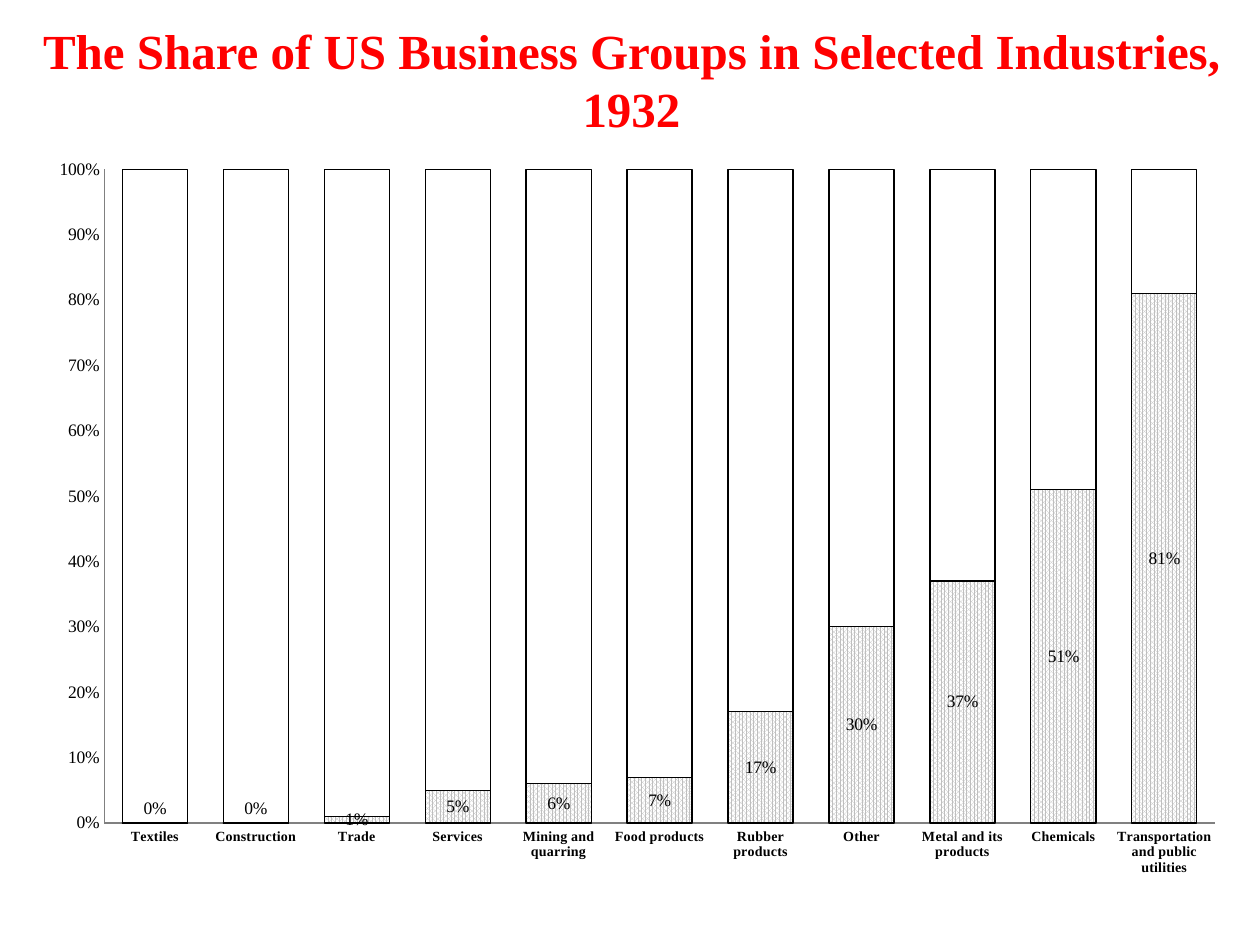
from lxml.etree import SubElement
from pptx import Presentation
from pptx.chart.data import CategoryChartData
from pptx.dml.color import RGBColor
from pptx.enum.chart import XL_CHART_TYPE, XL_LABEL_POSITION, XL_TICK_MARK
from pptx.enum.dml import MSO_PATTERN
from pptx.enum.text import MSO_ANCHOR, MSO_AUTO_SIZE, PP_ALIGN
from pptx.oxml.ns import qn
from pptx.util import Emu, Pt

PX = 914400 / 126
FONT = "Times New Roman"
COLORS = {"title": "FF0000", "text": "000000", "outline": "000000", "dots": "BFBFBF",
          "paper": "FFFFFF", "axis": "808080"}
GROUP_SHARES = {
    "Textiles": 0, "Construction": 0, "Trade": 0.01, "Services": 0.05,
    "Mining and quarring": 0.06, "Food products": 0.07, "Rubber products": 0.17,
    "Other": 0.3, "Metal and its products": 0.37, "Chemicals": 0.51,
    "Transportation and public utilities": 0.81,
}


def px(length):
    """Turn whole pixels into EMU."""
    return Emu(round(length * PX))


def color(name):
    """Look up a named colour."""
    return RGBColor.from_string(COLORS[name])


def apply(target, values):
    """Set each attribute of the target from a dict."""
    for attribute, value in values.items():
        setattr(target, attribute, value)


def style_font(font, size, name="text", bold=False):
    """Give a font its face, size, weight and colour."""
    apply(font, {"name": FONT, "size": Pt(size), "bold": bold})
    font.color.rgb = color(name)


def style_line(line, name):
    """Draw a thin line in a named colour."""
    line.color.rgb = color(name)
    line.width = Pt(0.75)


def set_layout(parent, index, values):
    """Place a chart part by fractions of the chart."""
    for old_layout in parent.findall(qn("c:layout")):
        parent.remove(old_layout)
    layout = SubElement(parent, qn("c:layout"))
    parent.insert(index, layout)
    manual = SubElement(layout, qn("c:manualLayout"))
    for tag, value in values.items():
        SubElement(manual, qn(f"c:{tag}")).set("val", str(value))


def add_title(slide, wording):
    """Move, fill and format the title placeholder."""
    title = slide.shapes.title
    apply(title, {"left": px(3), "top": px(21), "width": px(1257), "height": px(116)})
    frame = title.text_frame
    apply(frame, {"text": wording, "word_wrap": True, "auto_size": MSO_AUTO_SIZE.NONE,
                  "vertical_anchor": MSO_ANCHOR.MIDDLE})
    heading = frame.paragraphs[0]
    heading.alignment = PP_ALIGN.CENTER
    style_font(heading.runs[0].font, 28, "title", True)


def style_axes(chart):
    """Format the industry axis and the percentage axis."""
    for axis in (chart.category_axis, chart.value_axis):
        apply(axis, {"major_tick_mark": XL_TICK_MARK.NONE, "minor_tick_mark": XL_TICK_MARK.NONE})
        style_line(axis.format.line, "axis")
    style_font(chart.category_axis.tick_labels.font, 8, bold=True)
    percent = chart.value_axis
    apply(percent, {"minimum_scale": 0, "maximum_scale": 1, "major_unit": 0.1,
                    "has_major_gridlines": True})
    style_line(percent.major_gridlines.format.line, "paper")
    apply(percent.tick_labels, {"number_format": "0%", "number_format_is_linked": False})
    style_font(percent.tick_labels.font, 10)


def label_shares(series):
    """Show the shares, lifting the labels of the empty bars."""
    labels = series.data_labels
    apply(labels, {"show_value": True, "number_format": "0%", "number_format_is_linked": False,
                   "position": XL_LABEL_POSITION.CENTER})
    style_font(labels.font, 10)
    for index, lift in enumerate((-0.02, -0.02)):
        label = series.points[index].data_label
        label.position = XL_LABEL_POSITION.CENTER
        style_font(label.font, 10)
        set_layout(labels._element.findall(qn("c:dLbl"))[index], 1, {"x": 0, "y": lift})


def add_share_chart(slide):
    """Add the stacked columns of group shares and remainders."""
    shares = CategoryChartData(number_format="0%")
    shares.categories = list(GROUP_SHARES)
    shares.add_series("Series 1", GROUP_SHARES.values())
    shares.add_series("Series 2", [round(1 - share, 2) for share in GROUP_SHARES.values()])
    chart = slide.shapes.add_chart(XL_CHART_TYPE.COLUMN_STACKED, px(32), px(147),
                                   px(1207), px(743), shares).chart
    apply(chart, {"has_legend": False, "has_title": False})
    style_font(chart.font, 10)
    style_axes(chart)
    plot = chart.plots[0]
    apply(plot, {"gap_width": 55, "overlap": 100, "vary_by_categories": False})
    groups, remainder = plot.series
    groups.format.fill.patterned()
    groups.format.fill.pattern = MSO_PATTERN.PERCENT_80
    groups.format.fill.fore_color.rgb = color("dots")
    groups.format.fill.back_color.rgb = color("paper")
    remainder.format.fill.solid()
    remainder.format.fill.fore_color.rgb = color("paper")
    for series in (groups, remainder):
        style_line(series.format.line, "outline")
    label_shares(groups)
    set_layout(chart._chartSpace.chart.plotArea, 0,
               {"layoutTarget": "inner", "xMode": "edge", "yMode": "edge",
                "x": 0.06, "y": 0.03, "w": 0.92, "h": 0.88})


def main():
    """Build and save the slide."""
    deck = Presentation()
    apply(deck, {"slide_width": px(1260), "slide_height": px(945)})
    slide = deck.slides.add_slide(deck.slide_layouts[5])
    add_title(slide, "The Share of US Business Groups in Selected Industries, 1932")
    add_share_chart(slide)
    deck.save("out.pptx")


if __name__ == "__main__":
    main()
